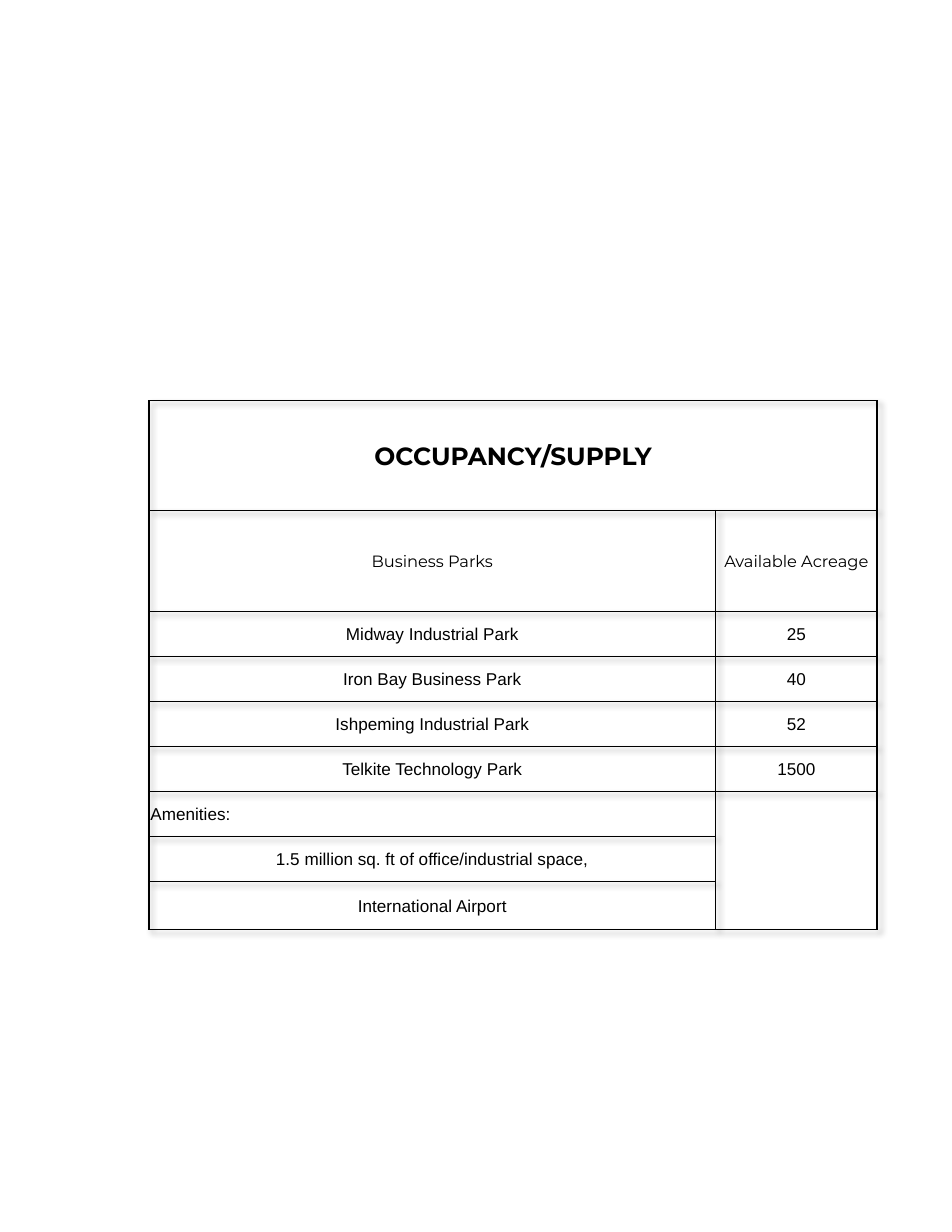
import pptx
import pptx.util
import pptx.dml.color
import pptx.enum.text
import pptx.oxml
import pptx.oxml.ns

Cm = pptx.util.Cm
Pt = pptx.util.Pt

ROWS = [
    ("OCCUPANCY/SUPPLY", ""),
    ("Business Parks", "Available Acreage"),
    ("Midway Industrial Park", "25"),
    ("Iron Bay Business Park", "40"),
    ("Ishpeming Industrial Park", "52"),
    ("Telkite Technology Park", "1500"),
    ("Amenities:", ""),
    ("1.5 million sq. ft of office/industrial space,", ""),
    ("International Airport", ""),
]
WIDTHS = [12.85, 3.66]
HEIGHTS = [2.49, 2.29] + [1.02] * 6 + [1.09]
FONTS = [("Montserrat", 16, True), ("Montserrat", 10.5, False)]
BODY = ("Arial", 11, False)
INK = "000000"


def color(code):
    return pptx.dml.color.RGBColor.from_string(code)


def add_xml(parent, index, body):
    space = pptx.oxml.ns.nsdecls("a")
    tag, rest = body.split(" ", 1)
    parent.insert(index, pptx.oxml.parse_xml(f"<{tag} {space} {rest}"))


def set_edges(cell, widths):
    props = cell._tc.get_or_add_tcPr()
    for index, (side, width) in enumerate(zip("LRTB", widths)):
        add_xml(props, index,
                f'<a:ln{side} w="{Pt(width)}"><a:solidFill><a:srgbClr val="{INK}"/>'
                f'</a:solidFill></a:ln{side}>'.replace("<", "", 1))


def set_text(cell, text, style, align):
    name, size, bold = style
    cell.margin_left = cell.margin_right = cell.margin_top = Cm(0.03)
    cell.margin_bottom = 0
    cell.vertical_anchor = pptx.enum.text.MSO_ANCHOR.MIDDLE
    cell.text_frame.text = text
    para = cell.text_frame.paragraphs[0]
    para.alignment = align
    for run in para.runs:
        run.font.name = name
        run.font.size = Pt(size)
        run.font.bold = bold
        run.font.color.rgb = color(INK)


def add_shade(table):
    add_xml(table._tbl.tblPr, 0,
            'a:effectLst ><a:outerShdw blurRad="50800" dist="38100" dir="2700000" '
            'algn="tl" rotWithShape="0"><a:srgbClr val="000000"><a:alpha val="40000"/>'
            '</a:srgbClr></a:outerShdw></a:effectLst>')


def add_grid(slide):
    last = len(ROWS) - 1
    frame = slide.shapes.add_table(len(ROWS), 2, Cm(3.38), Cm(9.09),
                                   Cm(sum(WIDTHS)), Cm(sum(HEIGHTS)))
    table = frame.table
    table.first_row = table.horz_banding = False
    add_shade(table)
    for col, width in zip(table.columns, WIDTHS):
        col.width = Cm(width)
    for row, height in zip(table.rows, HEIGHTS):
        row.height = Cm(height)
    table.cell(0, 0).merge(table.cell(0, 1))
    table.cell(6, 1).merge(table.cell(last, 1))
    aligns = pptx.enum.text.PP_ALIGN
    for r, texts in enumerate(ROWS):
        style = FONTS[r] if r < len(FONTS) else BODY
        for c, text in enumerate(texts):
            cell = table.cell(r, c)
            align = aligns.LEFT if text == "Amenities:" else aligns.CENTER
            set_text(cell, text, style, align)
            cell.fill.background()
            right = 1 if c == 1 or r == 0 else 0.5
            low = 1 if r in (0, last) or (r, c) == (6, 1) else 0.5
            set_edges(cell, (0.5 if c else 1, right, 1 if r < 2 else 0.5, low))


def main():
    deck = pptx.Presentation()
    deck.slide_width = Cm(21.59)
    deck.slide_height = Cm(27.94)
    slide = deck.slides.add_slide(deck.slide_layouts[6])
    add_grid(slide)
    deck.save("out.pptx")


if __name__ == "__main__":
    main()
